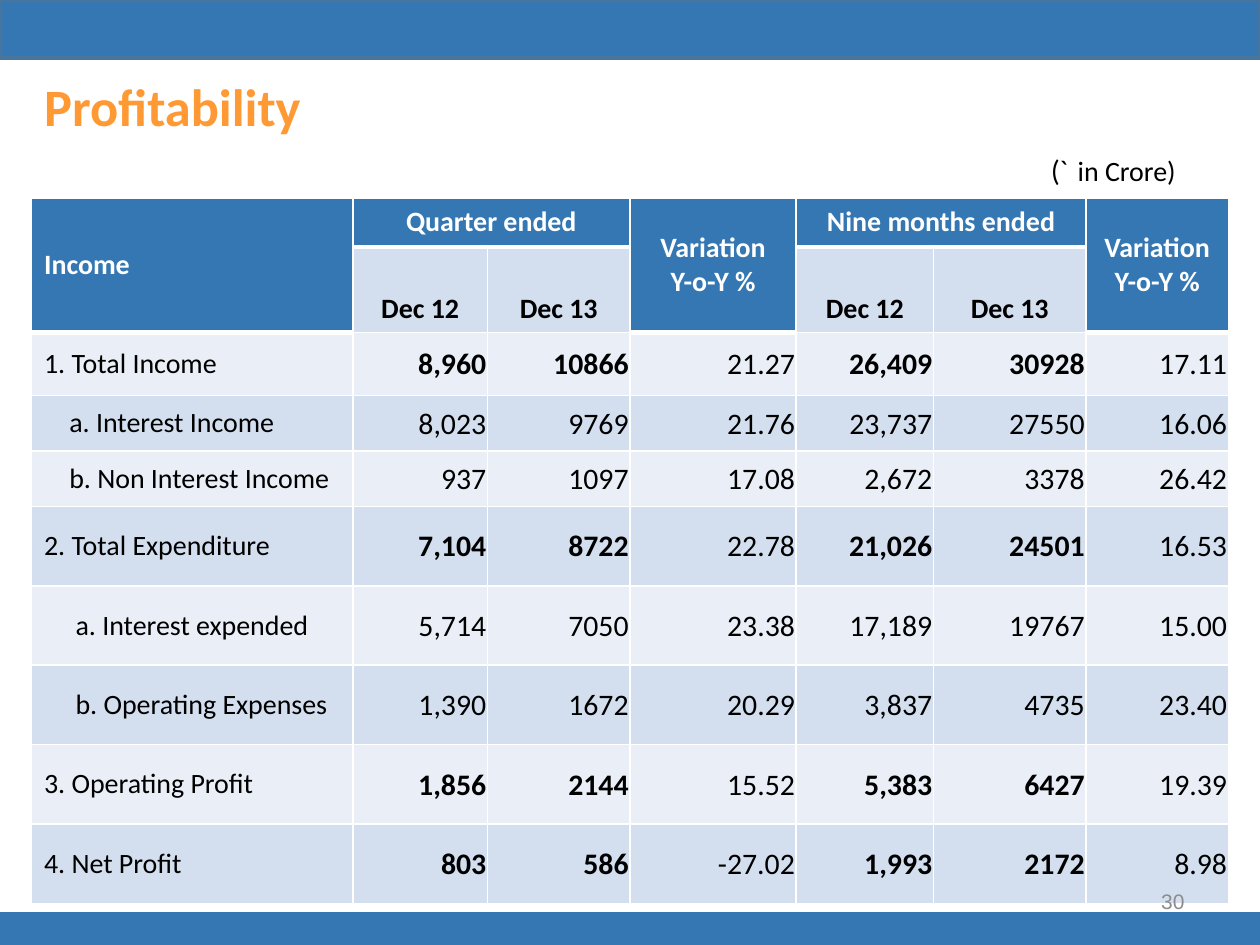
from lxml import etree
from pptx import Presentation
from pptx.dml.color import RGBColor
from pptx.enum.shapes import MSO_SHAPE
from pptx.enum.text import MSO_ANCHOR, PP_ALIGN
from pptx.oxml.ns import qn
from pptx.util import Inches, Pt

LEFT, CENTER, RIGHT = PP_ALIGN.LEFT, PP_ALIGN.CENTER, PP_ALIGN.RIGHT
MIDDLE, BOTTOM = MSO_ANCHOR.MIDDLE, MSO_ANCHOR.BOTTOM
BLUE, ORANGE, GRAY = "3477B2", "FF9933", "8C8C8C"
WHITE, BLACK = "FFFFFF", "000000"
BANDS = ("EAEFF7", "D3DFEE")

# Content: bands as top, height, outline
PAGE_BANDS = [(0, 0.46, "49749B"), (7.25, 0.25, BLUE)]
# Header cells: row, column, rows spanned, columns spanned, text, alignment
HEADERS = [
    (0, 0, 2, 1, "Income", LEFT),
    (0, 1, 1, 2, "Quarter ended", CENTER),
    (0, 3, 2, 1, "Variation\nY-o-Y %", CENTER),
    (0, 4, 1, 2, "Nine months ended", CENTER),
    (0, 6, 2, 1, "Variation\nY-o-Y %", CENTER),
]
DATES = {1: "Dec 12", 2: "Dec 13", 4: "Dec 12", 5: "Dec 13"}
# Body rows: label, indent in inches, values
ROWS = [
    ("1. Total Income", 0, "8,960 10866 21.27 26,409 30928 17.11"),
    ("a. Interest Income", 0.2, "8,023 9769 21.76 23,737 27550 16.06"),
    ("b. Non Interest Income", 0.2, "937 1097 17.08 2,672 3378 26.42"),
    ("2. Total Expenditure", 0, "7,104 8722 22.78 21,026 24501 16.53"),
    ("a. Interest expended", 0.25, "5,714 7050 23.38 17,189 19767 15.00"),
    ("b. Operating Expenses", 0.25, "1,390 1672 20.29 3,837 4735 23.40"),
    ("3. Operating Profit", 0, "1,856 2144 15.52 5,383 6427 19.39"),
    ("4. Net Profit", 0, "803 586 -27.02 1,993 2172 8.98"),
]
COLUMN_WIDTHS = [2.55, 1.07, 1.13, 1.32, 1.09, 1.21, 1.13]
ROW_HEIGHTS = [0.39, 0.68, 0.5] + [0.44] * 2 + [0.63] * 5


def color(value):
    return RGBColor.from_string(value)


def write(frame, text, size, ink, bold=False, align=LEFT, font="Calibri"):
    frame.text = text
    for paragraph in frame.paragraphs:
        paragraph.alignment = align
        paragraph.font.name = font
        paragraph.font.size = Pt(size)
        paragraph.font.bold = bold
        paragraph.font.color.rgb = color(ink)


def add_text_box(slide, box, *args, **kwargs):
    frame = slide.shapes.add_textbox(*map(Inches, box)).text_frame
    frame.word_wrap = True
    write(frame, *args, **kwargs)
    return frame


def style_cell(cell, fill, bottom_width=1):
    properties = cell._tc.get_or_add_tcPr()
    for side, width in (("L", 1), ("R", 1), ("T", 1), ("B", bottom_width)):
        line = etree.SubElement(properties, qn("a:ln" + side), w=str(Pt(width)))
        solid = etree.SubElement(line, qn("a:solidFill"))
        etree.SubElement(solid, qn("a:srgbClr"), val=WHITE)
    cell.fill.solid()
    cell.fill.fore_color.rgb = color(fill)
    cell.vertical_anchor = MIDDLE


def fill_headers(table):
    for column in range(len(COLUMN_WIDTHS)):
        style_cell(table.cell(0, column), BLUE, 3)
        style_cell(table.cell(1, column), BANDS[1] if column in DATES else BLUE)
    for row, column, rows, columns, text, align in HEADERS:
        cell = table.cell(row, column)
        cell.merge(table.cell(row + rows - 1, column + columns - 1))
        write(cell.text_frame, text, 16, WHITE, True, align)
    for column, text in DATES.items():
        cell = table.cell(1, column)
        cell.vertical_anchor = BOTTOM
        write(cell.text_frame, text, 16, BLACK, True, CENTER)


def fill_body(table):
    for index, (label, indent, values) in enumerate(ROWS):
        for column, text in enumerate([label] + values.split()):
            cell = table.cell(index + 2, column)
            style_cell(cell, BANDS[index % 2])
            if column == 0:
                cell.margin_left = Inches(0.1 + indent)
                write(cell.text_frame, text, 16, BLACK)
                paragraph = cell.text_frame.paragraphs[0]
                paragraph.space_before = paragraph.space_after = Pt(3)
            else:
                cell.margin_left = cell.margin_right = cell.margin_top = Inches(0.01)
                cell.margin_bottom = 0
                # Totals are bold, except in the variation columns
                bold = indent == 0 and column in DATES
                write(cell.text_frame, text, 17, BLACK, bold, RIGHT)


def main():
    presentation = Presentation()
    presentation.slide_width, presentation.slide_height = Inches(10), Inches(7.5)
    slide = presentation.slides.add_slide(presentation.slide_layouts[5])

    # Bands at the top and bottom of the page
    for top, height, outline in PAGE_BANDS:
        band = slide.shapes.add_shape(
            MSO_SHAPE.RECTANGLE, 0, Inches(top), Inches(10), Inches(height))
        band.shadow.inherit = False
        band.fill.solid()
        band.fill.fore_color.rgb = color(BLUE)
        band.line.color.rgb = color(outline)
        band.line.width = Pt(2)

    # Title
    title = slide.shapes.title
    title.left, title.top = Inches(0.25), Inches(0.58)
    title.width, title.height = Inches(4.5), Inches(0.52)
    title.text_frame.vertical_anchor = MIDDLE
    write(title.text_frame, "Profitability", 30, ORANGE, True)

    # Table
    table = slide.shapes.add_table(
        len(ROW_HEIGHTS), len(COLUMN_WIDTHS), Inches(0.25), Inches(1.57),
        Inches(sum(COLUMN_WIDTHS)), Inches(sum(ROW_HEIGHTS))).table
    for column, width in zip(table.columns, COLUMN_WIDTHS):
        column.width = Inches(width)
    for row, height in zip(table.rows, ROW_HEIGHTS):
        row.height = Inches(height)
    fill_headers(table)
    fill_body(table)

    # Unit note, in two fonts
    note = add_text_box(slide, (8.25, 1.17, 1.58, 0.37), "(` ", 16, BLACK, font="Lato")
    run = note.paragraphs[0].add_run()
    run.text = "in Crore)"
    run.font.name = "Calibri"

    # Page number
    number = add_text_box(slide, (7.17, 6.95, 2.33, 0.4), "30", 12, GRAY,
                          align=RIGHT, font="Arial")
    number.vertical_anchor = MIDDLE

    presentation.save("out.pptx")


if __name__ == "__main__":
    main()
